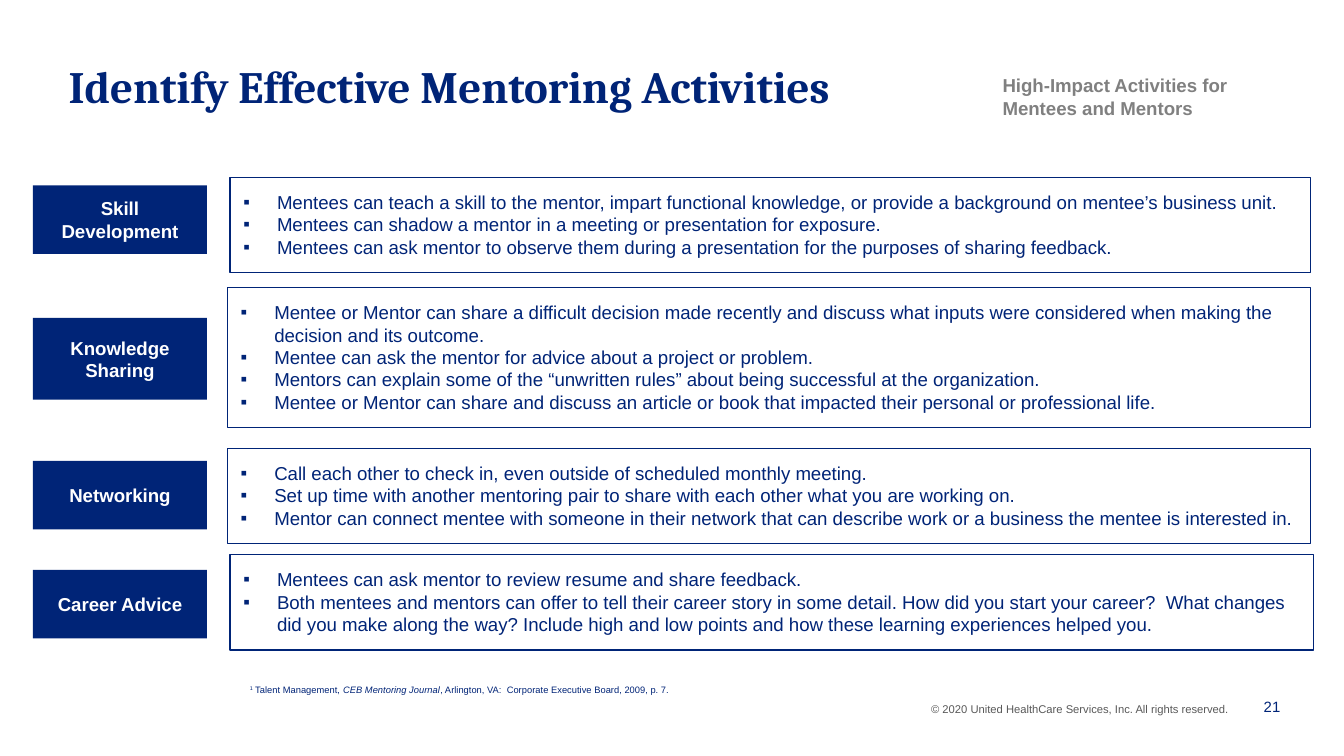
import pptx
import pptx.util
import pptx.dml.color
import pptx.enum.shapes
import pptx.enum.text
import pptx.oxml
import pptx.oxml.ns

NAVY, GREY, DARK, WHITE = "002477", "808080", "595959", "FFFFFF"
CELL = pptx.util.Inches(0.1)  # square grid: 100 columns by 56.25 rows
COLS, ROWS = 100, 56.25
TAG_COL, TAG_WIDE = 2.45, 12.95
ALIGN = pptx.enum.text.PP_ALIGN
ANCHOR = pptx.enum.text.MSO_ANCHOR

# tag, tag row and height, box column, row, width and height, activities
GROUPS = [
    ("Skill Development", 13.8, 5.1, (17.13, 13.2, 80.4, 7.1), [
        "Mentees can teach a skill to the mentor, impart functional knowledge, or provide a background on mentee’s business unit.",
        "Mentees can shadow a mentor in a meeting or presentation for exposure.",
        "Mentees can ask mentor to observe them during a presentation for the purposes of sharing feedback."]),
    ("Knowledge Sharing", 23.65, 6.1, (16.93, 21.4, 80.6, 10.4), [
        "Mentee or Mentor can share a difficult decision made recently and discuss what inputs were considered when making the decision and its outcome.",
        "Mentee can ask the mentor for advice about a project or problem.",
        "Mentors can explain some of the “unwritten rules” about being successful at the organization.",
        "Mentee or Mentor can share and discuss an article or book that impacted their personal or professional life."]),
    ("Networking", 34.3, 5.1, (16.93, 33.35, 80.6, 7.1), [
        "Call each other to check in, even outside of scheduled monthly meeting.",
        "Set up time with another mentoring pair to share with each other what you are working on.",
        "Mentor can connect mentee with someone in their network that can describe work or a business the mentee is interested in."]),
    ("Career Advice", 42.4, 5.1, (17.13, 41.26, 80.6, 7.1), [
        "Mentees can ask mentor to review resume and share feedback.",
        "Both mentees and mentors can offer to tell their career story in some detail. How did you start your career?  What changes did you make along the way? Include high and low points and how these learning experiences helped you."]),
]


def grid(*cells):
    return [round(cell * CELL) for cell in cells]


def color(code):
    return pptx.dml.color.RGBColor.from_string(code)


def write(para, text, size=10, font="Arial", ink=NAVY, bold=False,
          slant=False, align=ALIGN.LEFT, raised=False):
    """Add one formatted run to a paragraph."""
    para.alignment = align
    run = para.add_run()
    run.text = text
    run.font.size = pptx.util.Pt(size)
    run.font.name = font
    run.font.color.rgb = color(ink)
    run.font.bold = bold
    run.font.italic = slant
    if raised:
        run._r.get_or_add_rPr().set("baseline", "30000")


def frame(shape, left=1, top=0, right=1, base=0, anchor=ANCHOR.TOP):
    """Set wrap, anchor and insets; return the text frame."""
    body = shape.text_frame
    body.word_wrap = True
    body.auto_size = pptx.enum.text.MSO_AUTO_SIZE.NONE
    body.vertical_anchor = anchor
    (body.margin_left, body.margin_top,
     body.margin_right, body.margin_bottom) = grid(left, top, right, base)
    return body


def bullet(para):
    props = para._p.get_or_add_pPr()
    indent = pptx.util.Inches(0.25)
    props.set("marL", str(indent))
    props.set("indent", str(-indent))
    space = pptx.oxml.ns.nsdecls("a")
    for tag in ('buFont {} typeface="Arial"', 'buChar {} char="▪"'):
        props.append(pptx.oxml.parse_xml("<a:" + tag.format(space) + "/>"))


def panel(slide, place, fill=None, line=None):
    kind = pptx.enum.shapes.MSO_SHAPE.RECTANGLE
    shape = slide.shapes.add_shape(kind, *grid(*place))
    shape.shadow.inherit = False
    if fill:
        shape.fill.solid()
        shape.fill.fore_color.rgb = color(fill)
    else:
        shape.fill.background()
    if line:
        shape.line.color.rgb = color(line)
        shape.line.width = pptx.util.Pt(0.75)
    else:
        shape.line.fill.background()
    return shape


def label(slide, place, text, inset=(1, 0.5, 1, 0.5), anchor=ANCHOR.TOP, **look):
    box = slide.shapes.add_textbox(*grid(*place))
    para = frame(box, *inset, anchor=anchor).paragraphs[0]
    write(para, text, **look)
    return para


def head(slide, text):
    title = slide.shapes.title
    title.left, title.top, title.width, title.height = grid(4.1, 3.85, 79.4, 6)
    para = frame(title, 1, 0.5, 1, 0.5).paragraphs[0]
    write(para, text, size=24, font="Cambria", bold=True)


def group(slide, name, row, tall, place, items):
    """Draw a tag and the box that lists its activities."""
    tag = panel(slide, (TAG_COL, row, TAG_WIDE, tall), fill=NAVY)
    para = frame(tag, anchor=ANCHOR.MIDDLE).paragraphs[0]
    write(para, name, ink=WHITE, bold=True, align=ALIGN.CENTER)
    body = frame(panel(slide, place, line=NAVY), 1, 1, 1, 1)
    for index, item in enumerate(items):
        para = body.add_paragraph() if index else body.paragraphs[0]
        bullet(para)
        write(para, item)


def source(slide):
    para = label(slide, (17.6, 50.9, 53.9, 0.8), "1", (1, 0, 1, 0),
                 size=5, raised=True)
    write(para, " Talent Management, ", size=5)
    write(para, "CEB Mentoring Journal", size=5, slant=True)
    write(para, ", Arlington, VA:  Corporate Executive Board, 2009, p. 7.", size=5)


def main():
    deck = pptx.Presentation()
    deck.slide_width, deck.slide_height = grid(COLS, ROWS)
    slide = deck.slides.add_slide(deck.slide_layouts.get_by_name("Title Only"))
    head(slide, "Identify Effective Mentoring Activities")
    label(slide, (71.5, 5.53, 22.6, 3.4),
          "High-Impact Activities for Mentees and Mentors",
          (3.1, 0, 2.2, 0), ink=GREY, bold=True)
    for entry in GROUPS:
        group(slide, *entry)
    source(slide)
    label(slide, (68.3, 51.8, 25.8, 2),
          "© 2020 United HealthCare Services, Inc. All rights reserved.",
          size=6, ink=DARK)
    label(slide, (92.35, 51.05, 3.9, 3.1), "21", anchor=ANCHOR.MIDDLE,
          size=8, align=ALIGN.RIGHT)
    deck.save("out.pptx")


if __name__ == "__main__":
    main()
